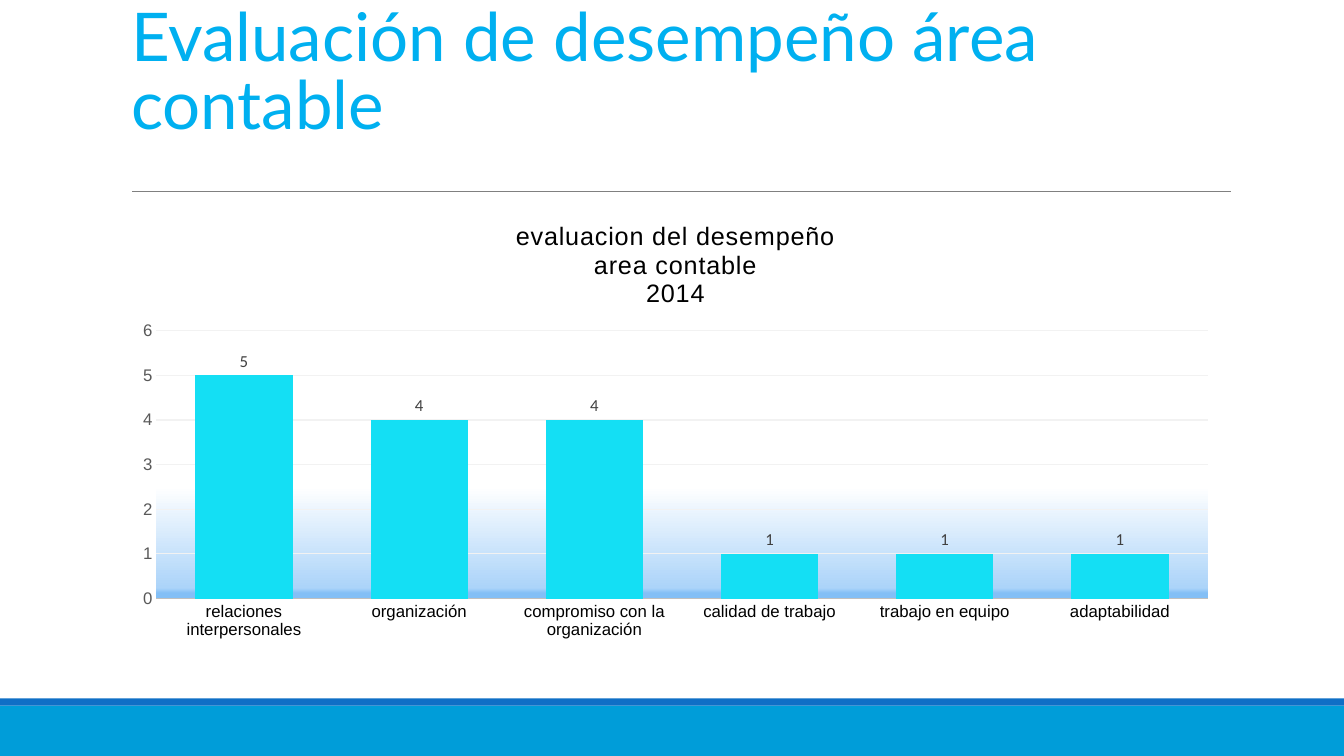
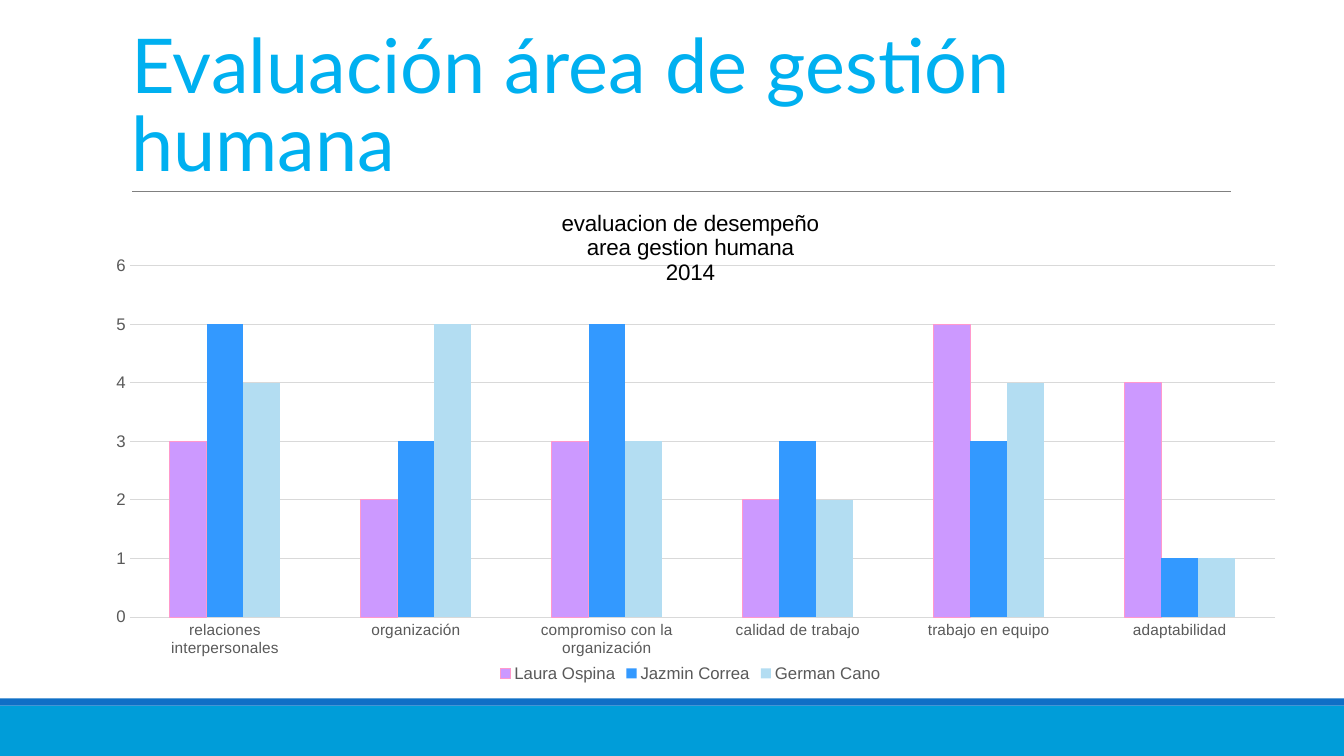
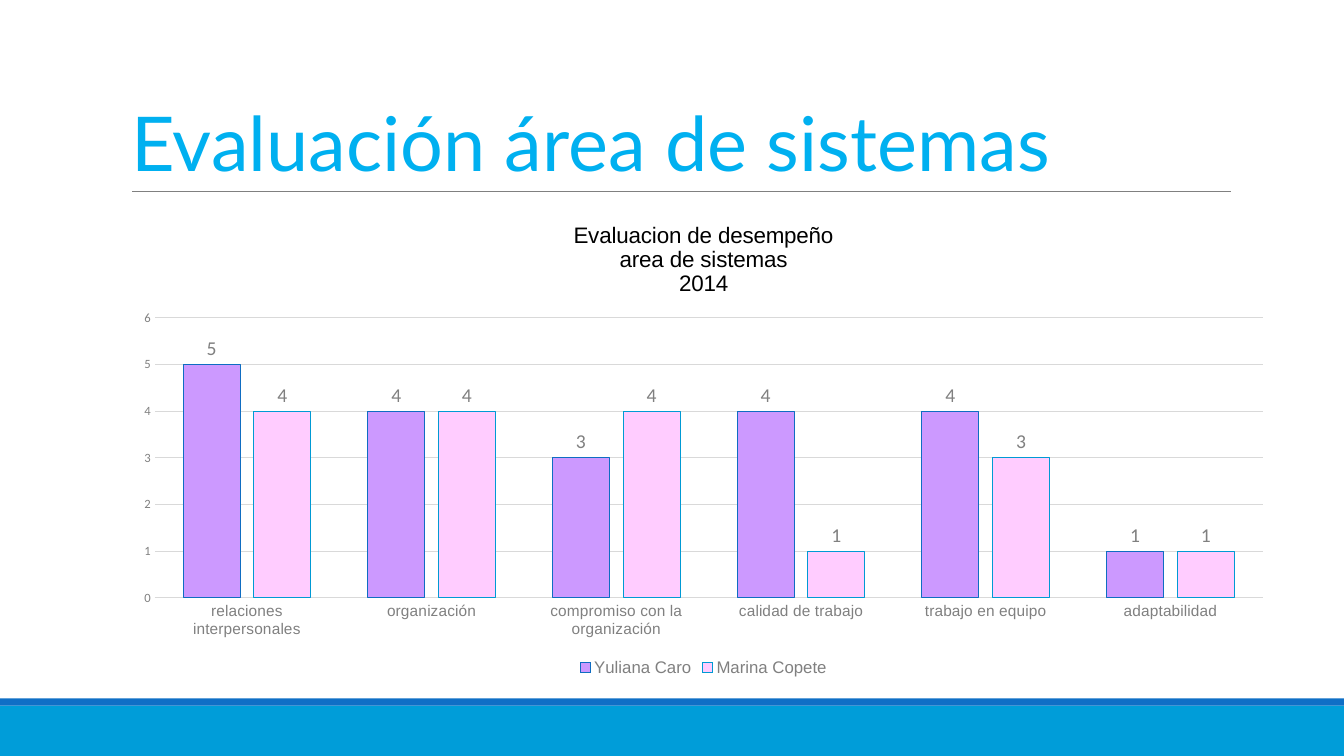
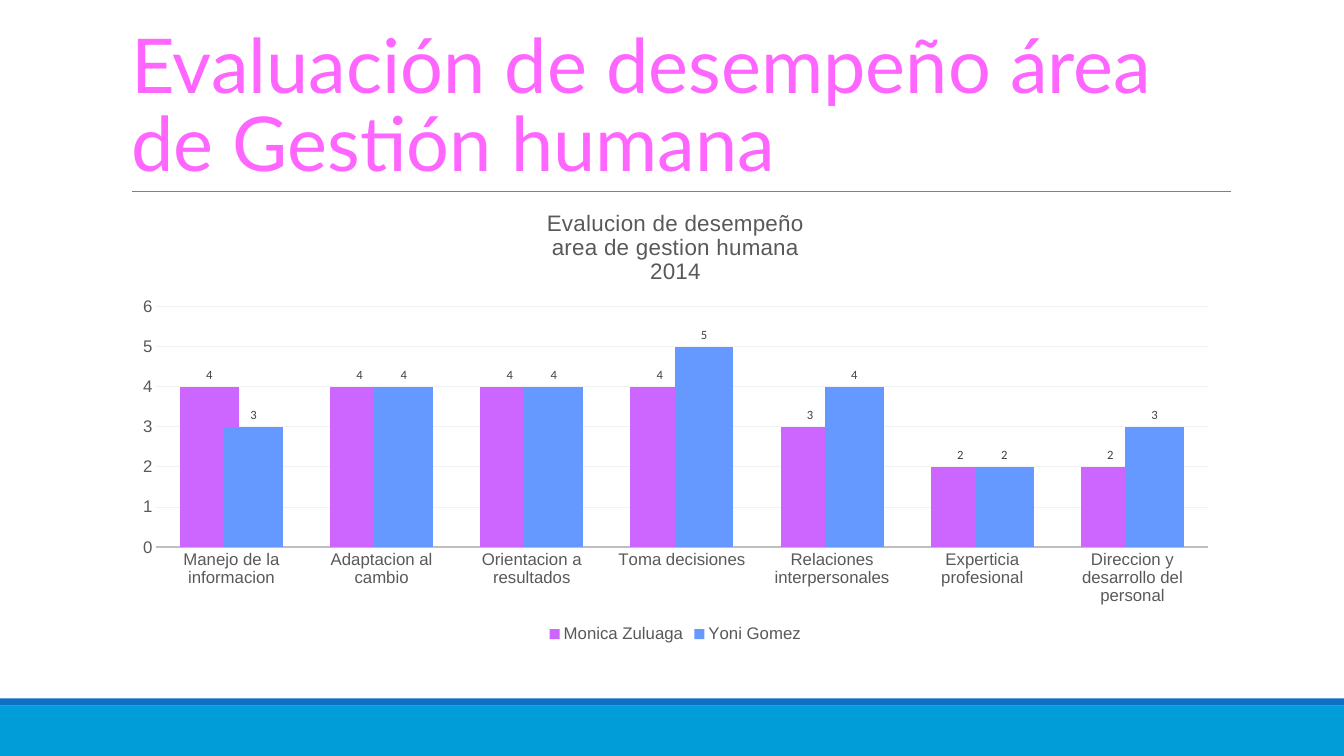
import dataclasses
from typing import Optional

import pptx
import pptx.chart.data
import pptx.dml.color
import pptx.enum.chart
import pptx.enum.shapes
import pptx.enum.text
import pptx.oxml
import pptx.oxml.ns
import pptx.util

COLS, ROWS = 160, 90
SLIDE_W, SLIDE_H = pptx.util.Inches(13.33), pptx.util.Inches(7.5)
TITLE_ONLY = 5


@dataclasses.dataclass(frozen=True)
class Theme:
    title_font: str = "Lato"
    chart_font: str = "Arial"
    number_font: str = "Calibri"
    band: str = "009DD9"
    stripe: str = "0F6FC6"
    rule: str = "808080"
    sky: str = "00B0F0"
    pink: str = "FF66FF"
    black: str = "000000"
    dark: str = "404040"
    text: str = "595959"
    gray: str = "808080"
    grid: str = "D9D9D9"
    pale_grid: str = "F2F2F2"
    axis: str = "BFBFBF"
    lilac: str = "CC99FF"
    title_size: int = 54
    base_size: int = 10
    legend_size: int = 12
    rule_width: float = 0.5


T = Theme()


@dataclasses.dataclass(frozen=True)
class Box:
    """Area in grid columns and rows."""
    col: float
    row: float
    cols: float
    rows: float

    def emu(self) -> tuple:
        return (x_at(self.col), y_at(self.row), x_at(self.cols), y_at(self.rows))


@dataclasses.dataclass(frozen=True)
class TextStyle:
    size: float
    color: str
    font: str = T.chart_font


@dataclasses.dataclass(frozen=True)
class LineStyle:
    color: str
    width: float = 0.75


@dataclasses.dataclass(frozen=True)
class Series:
    name: str
    values: tuple
    fill: str
    line: Optional[LineStyle] = None


@dataclasses.dataclass(frozen=True)
class ChartSlide:
    title: str
    box: Box
    chart_title: tuple
    chart_title_style: TextStyle
    categories: tuple
    series: tuple
    cat_style: TextStyle
    val_style: TextStyle
    cat_line: LineStyle
    grid_line: LineStyle
    gap: int
    overlap: int = 0
    labels: Optional[TextStyle] = None
    legend_color: Optional[str] = None
    title_color: str = T.sky
    title_size: int = T.title_size
    title_lift: float = 0  # rows between the title and the foot of its box
    spacing: int = 0  # chart title tracking, hundredths of a point
    plot_share: Optional[tuple] = None
    plot_stops: tuple = ()


def x_at(cols: float) -> int:
    return round(SLIDE_W * cols / COLS)


def y_at(rows: float) -> int:
    return round(SLIDE_H * rows / ROWS)


def rgb(color: str) -> pptx.dml.color.RGBColor:
    return pptx.dml.color.RGBColor.from_string(color)


def set_font(font, style: TextStyle) -> None:
    font.name = style.font
    font.size = pptx.util.Pt(style.size)
    font.bold = False
    font.color.rgb = rgb(style.color)


def set_line(line, style: Optional[LineStyle]) -> None:
    if style is None:
        line.fill.background()
        return
    line.color.rgb = rgb(style.color)
    line.width = pptx.util.Pt(style.width)


def chart_xml(body: str):
    """Parse one chart element, adding the namespaces to its opening tag."""
    tag, rest = body.split(">", 1)
    return pptx.oxml.parse_xml(f"{tag} {pptx.oxml.ns.nsdecls('c', 'a')}>{rest}")


def add_frame(slide) -> None:
    """Foot bands and the rule below the title."""
    for box, color in ((Box(0, 84, COLS, 6), T.band),
                       (Box(0, 83.16, COLS, 0.84), T.stripe)):
        sp = slide.shapes.add_shape(
            pptx.enum.shapes.MSO_SHAPE.RECTANGLE, *box.emu())
        sp.shadow.inherit = False
        sp.fill.solid()
        sp.fill.fore_color.rgb = rgb(color)
        sp.line.fill.background()
    rule = slide.shapes.add_connector(
        pptx.enum.shapes.MSO_CONNECTOR.STRAIGHT,
        x_at(15.72), y_at(22.8), x_at(146.52), y_at(22.8))
    set_line(rule.line, LineStyle(T.rule, T.rule_width))
    rule._element.spPr.append(pptx.oxml.parse_xml(
        f"<a:effectLst {pptx.oxml.ns.nsdecls('a')}/>"))


def set_title(slide, item: ChartSlide) -> None:
    sp = slide.shapes.title
    sp.left, sp.top, sp.width, sp.height = Box(14.4, 3.72, 132, 19.08).emu()
    tf = sp.text_frame
    tf.word_wrap = True
    tf.auto_size = pptx.enum.text.MSO_AUTO_SIZE.NONE
    tf.vertical_anchor = pptx.enum.text.MSO_ANCHOR.BOTTOM
    tf.margin_bottom = y_at(0.6 + item.title_lift)
    p = tf.paragraphs[0]
    p.alignment = pptx.enum.text.PP_ALIGN.LEFT
    p.line_spacing = 0.85
    r = p.add_run()
    r.text = item.title
    set_font(r.font, TextStyle(item.title_size, item.title_color, T.title_font))


def set_chart_title(chart, item: ChartSlide) -> None:
    chart.has_title = True
    chart.chart_title.include_in_layout = False
    tf = chart.chart_title.text_frame
    for i, text in enumerate(item.chart_title):
        p = tf.add_paragraph() if i else tf.paragraphs[0]
        r = p.add_run()
        r.text = text
        set_font(r.font, item.chart_title_style)
        if item.spacing:
            r._r.get_or_add_rPr().set("spc", str(item.spacing))


def set_axes(chart, item: ChartSlide) -> None:
    none = pptx.enum.chart.XL_TICK_MARK.NONE
    for axis, style, line in (
            (chart.category_axis, item.cat_style, item.cat_line),
            (chart.value_axis, item.val_style, None)):
        axis.major_tick_mark = axis.minor_tick_mark = none
        set_font(axis.tick_labels.font, style)
        set_line(axis.format.line, line)
    axis = chart.value_axis
    axis.minimum_scale, axis.maximum_scale, axis.major_unit = 0, 6, 1
    axis.has_major_gridlines = True
    set_line(axis.major_gridlines.format.line, item.grid_line)


def set_series(plot, item: ChartSlide) -> None:
    plot.gap_width, plot.overlap = item.gap, item.overlap
    plot.vary_by_categories = False
    for ser, data in zip(plot.series, item.series):
        ser.format.fill.solid()
        ser.format.fill.fore_color.rgb = rgb(data.fill)
        set_line(ser.format.line, data.line)
        if item.labels:
            labels = ser.data_labels
            labels.show_value = True
            labels.position = pptx.enum.chart.XL_LABEL_POSITION.OUTSIDE_END
            set_font(labels.font, item.labels)


def set_plot_area(chart, item: ChartSlide) -> None:
    """Fixed inner plot area and gradient backdrop, where a slide has them."""
    area = chart._chartSpace.xpath("c:chart/c:plotArea")[0]
    if item.plot_share:
        for old in area.xpath("c:layout"):
            area.remove(old)
        modes = '<c:xMode val="edge"/><c:yMode val="edge"/>'
        places = "".join(f'<c:{k} val="{v}"/>'
                         for k, v in zip("xywh", item.plot_share))
        area.insert(0, chart_xml(
            '<c:layout><c:manualLayout><c:layoutTarget val="inner"/>'
            f"{modes}{places}</c:manualLayout></c:layout>"))
    if item.plot_stops:
        stops = "".join(
            f'<a:gs pos="{pos * 1000}"><a:srgbClr val="{color}"/></a:gs>'
            for pos, color in item.plot_stops)
        area.append(chart_xml(
            f"<c:spPr><a:gradFill><a:gsLst>{stops}</a:gsLst>"
            '<a:lin ang="5400000" scaled="0"/></a:gradFill></c:spPr>'))


def add_chart(slide, item: ChartSlide) -> None:
    data = pptx.chart.data.CategoryChartData()
    data.categories = item.categories
    for s in item.series:
        data.add_series(s.name, s.values)
    chart = slide.shapes.add_chart(
        pptx.enum.chart.XL_CHART_TYPE.COLUMN_CLUSTERED,
        *item.box.emu(), data).chart
    set_font(chart.font, TextStyle(T.base_size, T.black, T.number_font))
    set_chart_title(chart, item)
    set_axes(chart, item)
    set_series(chart.plots[0], item)
    set_plot_area(chart, item)
    chart.has_legend = item.legend_color is not None
    if chart.has_legend:
        chart.legend.position = pptx.enum.chart.XL_LEGEND_POSITION.BOTTOM
        chart.legend.include_in_layout = False
        set_font(chart.legend.font, TextStyle(T.legend_size, item.legend_color))


# Content
SKILLS = ("relaciones interpersonales", "organización",
          "compromiso con la organización", "calidad de trabajo",
          "trabajo en equipo", "adaptabilidad")
MANAGEMENT = ("Manejo de la informacion", "Adaptacion al cambio",
              "Orientacion a resultados", "Toma decisiones",
              "Relaciones interpersonales", "Experticia profesional",
              "Direccion y desarrollo del personal")

SLIDES = (
    ChartSlide(
        title="Evaluación de desempeño área contable",
        title_size=48, title_lift=5.1,
        box=Box(14.4, 24.24, 132, 52.8),
        chart_title=("evaluacion del desempeño", "area contable", "2014"),
        chart_title_style=TextStyle(18, T.black), spacing=60,
        categories=SKILLS,
        series=(Series("Series 1", (5, 4, 4, 1, 1, 1), "14DFF4"),),
        cat_style=TextStyle(12, T.black), val_style=TextStyle(12, T.text),
        cat_line=LineStyle(T.axis, 1.25), grid_line=LineStyle(T.pale_grid),
        gap=80, overlap=25, labels=TextStyle(12, T.dark, T.number_font),
        plot_stops=((0, "FFFFFF"), (58, "FFFFFF"), (96, "ACD4F9"),
                    (98, "83BFF6"), (100, "83BFF6"))),
    ChartSlide(
        title="Evaluación área de gestión humana",
        box=Box(11.16, 22.8, 142.08, 58.92),
        chart_title=("evaluacion de desempeño", "area gestion humana", "2014"),
        chart_title_style=TextStyle(16, T.black),
        categories=SKILLS,
        series=(Series("Laura Ospina", (3, 2, 3, 2, 5, 4), T.lilac,
                       LineStyle("FF99CC")),
                Series("Jazmin Correa", (5, 3, 5, 3, 3, 1), "3399FF"),
                Series("German Cano", (4, 5, 3, 2, 4, 1), "B3DDF2")),
        cat_style=TextStyle(11, T.text), val_style=TextStyle(12, T.text),
        cat_line=LineStyle(T.grid), grid_line=LineStyle(T.grid),
        gap=219, legend_color=T.text, plot_share=(0.03, 0.15, 0.96, 0.71)),
    ChartSlide(
        title="Evaluación área de sistemas",
        box=Box(14.4, 24.24, 138.72, 56.76),
        chart_title=("Evaluacion de desempeño", "area de sistemas", "2014"),
        chart_title_style=TextStyle(16, T.black),
        categories=SKILLS,
        series=(Series("Yuliana Caro", (5, 4, 3, 4, 4, 1), T.lilac,
                       LineStyle("0F6DC2")),
                Series("Marina Copete", (4, 4, 4, 1, 3, 1), "FFCCFF",
                       LineStyle("009AD4"))),
        cat_style=TextStyle(11, T.gray),
        val_style=TextStyle(9, T.gray, T.number_font),
        cat_line=LineStyle(T.grid), grid_line=LineStyle(T.grid),
        gap=100, overlap=-24, labels=TextStyle(14, T.gray, T.number_font),
        legend_color=T.gray),
    ChartSlide(
        title="Evaluación de desempeño área de Gestión humana",
        title_color=T.pink,
        box=Box(14.4, 22.8, 132, 54.24),
        chart_title=("Evalucion de desempeño", "area de gestion humana", "2014"),
        chart_title_style=TextStyle(16, T.text), spacing=30,
        categories=MANAGEMENT,
        series=(Series("Monica Zuluaga", (4, 4, 4, 4, 3, 2, 2), "CC66FF"),
                Series("Yoni Gomez", (3, 4, 4, 5, 4, 2, 3), "6699FF")),
        cat_style=TextStyle(12, T.text), val_style=TextStyle(12, T.text),
        cat_line=LineStyle(T.axis, 1.25), grid_line=LineStyle(T.pale_grid),
        gap=80, overlap=25, labels=TextStyle(9, T.dark, T.number_font),
        legend_color=T.text),
)


def main() -> None:
    prs = pptx.Presentation()
    prs.slide_width, prs.slide_height = SLIDE_W, SLIDE_H
    for item in SLIDES:
        slide = prs.slides.add_slide(prs.slide_layouts[TITLE_ONLY])
        add_frame(slide)
        set_title(slide, item)
        add_chart(slide, item)
    prs.save("out.pptx")


if __name__ == "__main__":
    main()
